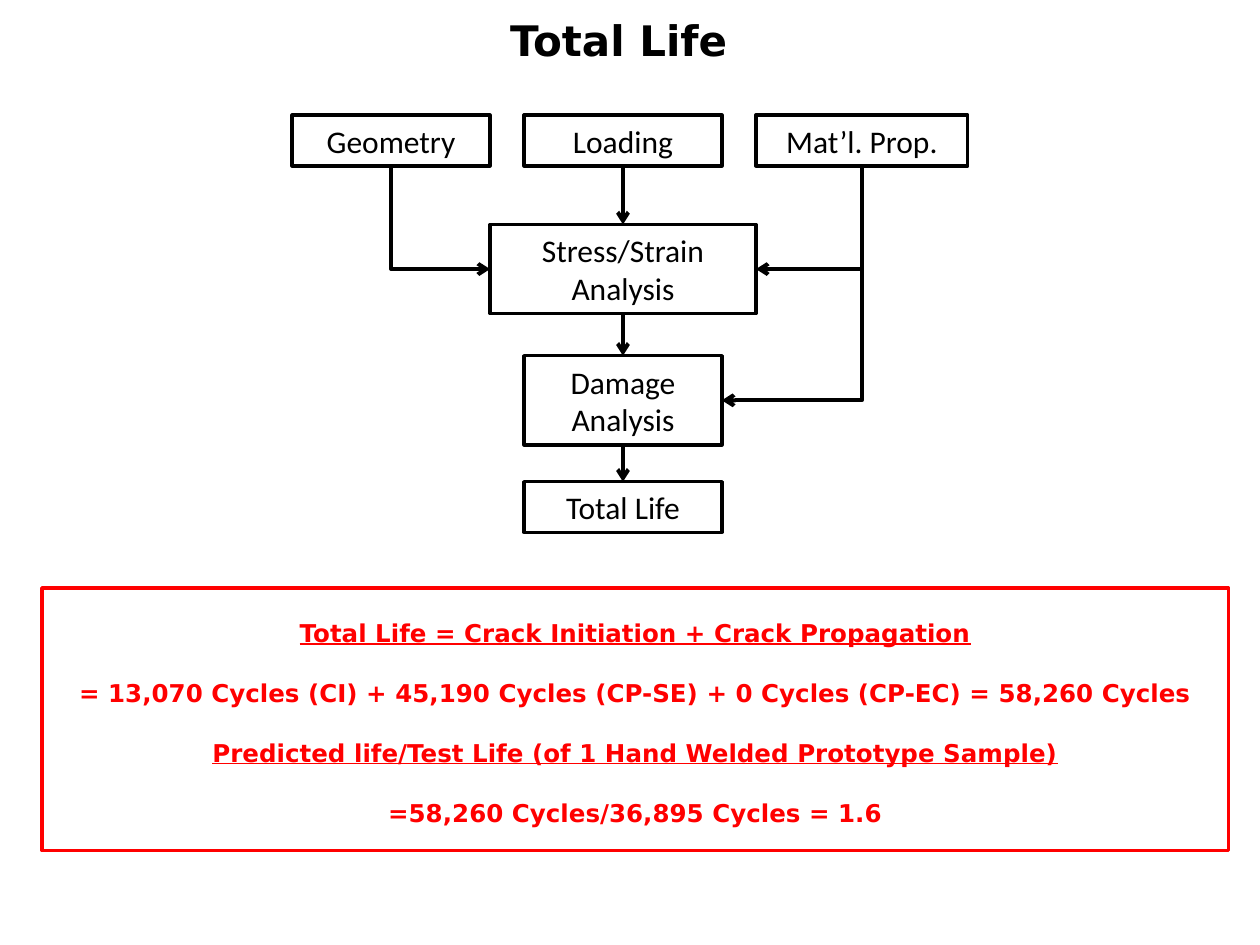
from pptx import Presentation
from pptx.dml.color import RGBColor
from pptx.enum.shapes import MSO_CONNECTOR, MSO_SHAPE
from pptx.enum.text import MSO_ANCHOR, PP_ALIGN
from pptx.oxml.ns import qn
from pptx.util import Pt
from lxml import etree

RECT = MSO_SHAPE.RECTANGLE
STRAIGHT, ELBOW = MSO_CONNECTOR.STRAIGHT, MSO_CONNECTOR.ELBOW
TOP, MIDDLE = MSO_ANCHOR.TOP, MSO_ANCHOR.MIDDLE
CENTER = PP_ALIGN.CENTER
BLACK, WHITE, RED = "000000", "FFFFFF", "FF0000"
BODY_FONT, HEAD_FONT = "Calibri", "DejaVu Sans"


def rgb(value):
    """Turn a hex string into a colour."""
    return RGBColor.from_string(value)


def style_text(p, font, size, color, bold=False, underline=False):
    """Centre a paragraph and format its runs."""
    p.alignment = CENTER
    for r in p.runs:
        r.font.name, r.font.size = font, Pt(size)
        r.font.bold, r.font.underline = bold, underline
        r.font.color.rgb = rgb(color)


def set_frame(tf, anchor, wrap, margins):
    """Set anchor, wrapping and the left, top, right and bottom margins."""
    tf.vertical_anchor, tf.word_wrap = anchor, wrap
    tf.margin_left, tf.margin_top, tf.margin_right, tf.margin_bottom = map(Pt, margins)


def add_box(s, box, line, fill=None):
    """Add an outlined rectangle."""
    sp = s.shapes.add_shape(RECT, *map(Pt, box))
    sp.shadow.inherit = False
    if fill:
        sp.fill.solid()
        sp.fill.fore_color.rgb = rgb(fill)
    else:
        sp.fill.background()
    sp.line.color.rgb, sp.line.width = rgb(line), Pt(2)
    return sp


def add_step(s, text, box):
    """Add one labelled step of the flow chart."""
    sp = add_box(s, box, BLACK, WHITE)
    set_frame(sp.text_frame, MIDDLE, True, (7.2, 3.6, 7.2, 3.6))
    sp.text_frame.text = text
    style_text(sp.text_frame.paragraphs[0], BODY_FONT, 18, BLACK)
    return sp


def style_arrow(c):
    """Give a connector its line and an open arrowhead at its end."""
    c.line.color.rgb, c.line.width = rgb(BLACK), Pt(2.25)
    ln = c.line._get_or_add_ln()
    etree.SubElement(ln, qn("a:tailEnd"), type="arrow")
    etree.SubElement(c._element.spPr, qn("a:effectLst"))


def add_down_arrow(s, start, end):
    """Join the bottom of one step to the top of the next."""
    c = s.shapes.add_connector(STRAIGHT, 0, 0, 0, 0)
    c.begin_connect(start, 2)
    c.end_connect(end, 0)
    style_arrow(c)


def add_side_arrow(s, start, end):
    """Run down from one step, then sideways into the near side of another."""
    x1, y1 = start.left + start.width // 2, start.top + start.height
    rightward = x1 < end.left
    x2 = end.left if rightward else end.left + end.width
    y2 = end.top + end.height // 2
    cx, cy = (x1 + x2) // 2, (y1 + y2) // 2
    half_w, half_h = (y2 - y1) // 2, abs(x2 - x1) // 2
    if rightward:
        half_w = -half_w
    c = s.shapes.add_connector(ELBOW, cx - half_w, cy - half_h, cx + half_w, cy + half_h)
    sp_pr = c._element.spPr
    sp_pr.find(qn("a:prstGeom")).set("prst", "bentConnector2")
    sp_pr.find(qn("a:xfrm")).set("rot", str((270 if rightward else 90) * 60000))
    style_arrow(c)


def add_title(s, text, box):
    """Place the slide title."""
    sp = s.shapes.title
    sp.left, sp.top, sp.width, sp.height = map(Pt, box)
    sp.text_frame.text = text
    set_frame(sp.text_frame, TOP, False, (0, 2, 0, 0))
    style_text(sp.text_frame.paragraphs[0], HEAD_FONT, 24, BLACK, bold=True)


def add_flow(s, box):
    """Draw the life analysis flow chart."""
    x, y, w, h = box
    step_w, gap, low, high = 113, 19.5, 29, 51
    mid_x = x + step_w + gap
    right_x = mid_x + step_w + gap
    geometry = add_step(s, "Geometry", (x, y, step_w, low))
    loading = add_step(s, "Loading", (mid_x, y, step_w, low))
    material = add_step(s, "Mat’l. Prop.", (right_x, y, x + w - right_x, low))
    stress = add_step(s, "Stress/Strain Analysis",
                      (mid_x - gap, y + 62.5, step_w + 2 * gap, high))
    damage = add_step(s, "Damage Analysis", (mid_x, y + 137.5, step_w, high))
    life = add_step(s, "Total Life", (mid_x, y + h - low, step_w, low))
    for start, end in ((geometry, stress), (material, stress), (material, damage)):
        add_side_arrow(s, start, end)
    for start, end in ((loading, stress), (stress, damage), (damage, life)):
        add_down_arrow(s, start, end)


def add_result(s, box):
    """Add the red box with headings and their calculations."""
    lines = (
        ("Total Life = Crack Initiation + Crack Propagation", True),
        ("= 13,070 Cycles (CI) + 45,190 Cycles (CP-SE) + 0 Cycles (CP-EC) = 58,260 Cycles", False),
        ("Predicted life/Test Life (of 1 Hand Welded Prototype Sample)", True),
        ("=58,260 Cycles/36,895 Cycles = 1.6", False),
    )
    gap = 17.4
    tf = add_box(s, box, RED).text_frame
    set_frame(tf, TOP, False, (0, gap, 0, 0))
    tf.text = "\n".join(text for text, _ in lines)
    for i, (p, (_, heading)) in enumerate(zip(tf.paragraphs, lines)):
        p.space_before = Pt(gap if i else 0)
        style_text(p, HEAD_FONT, 14, RED, bold=True, underline=heading)


def main():
    """Build and save the slide."""
    prs = Presentation()
    prs.slide_width, prs.slide_height = Pt(720), Pt(540)
    s = prs.slides.add_slide(prs.slide_layouts[5])
    add_title(s, "Total Life", (263.5, 6, 180, 36))
    add_flow(s, (167, 65.75, 386, 238.5))
    add_result(s, (24, 336, 678, 150))
    prs.save("out.pptx")


if __name__ == "__main__":
    main()
